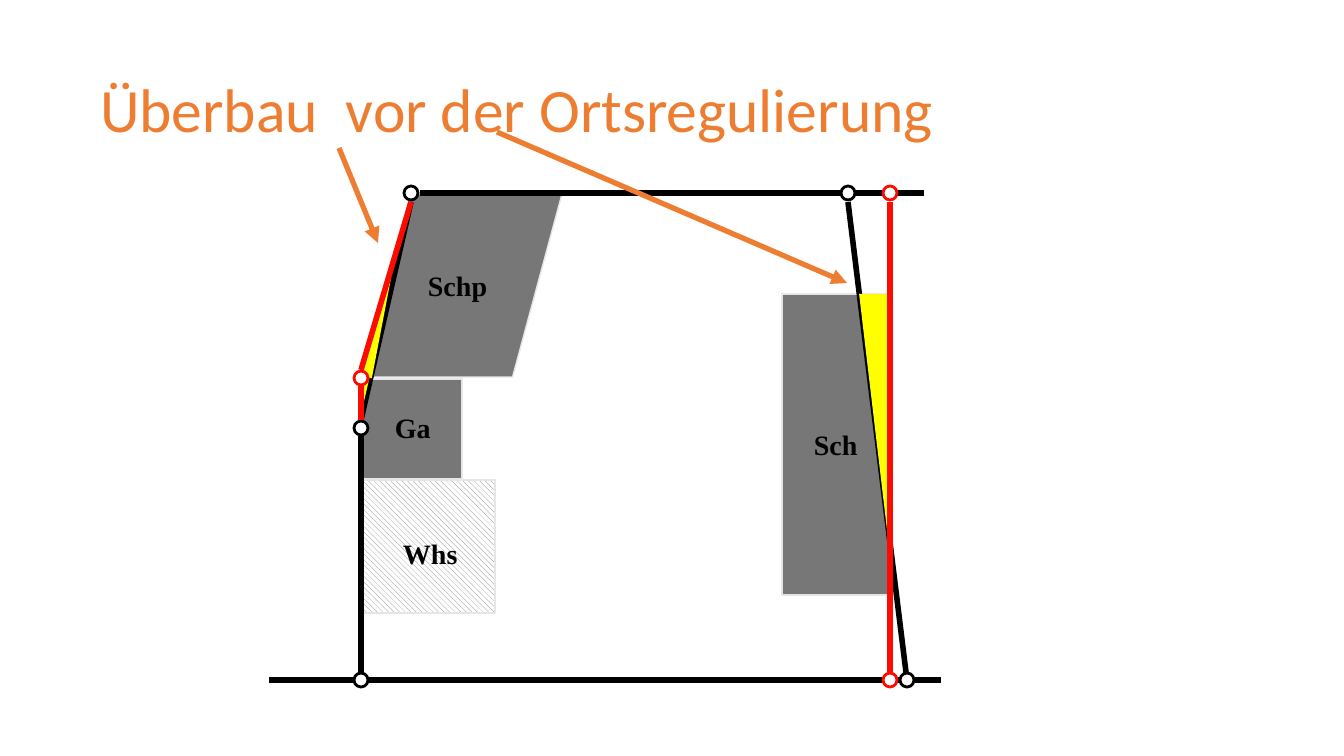
from lxml import etree
from pptx import Presentation
from pptx import util as u
from pptx.dml.color import RGBColor
from pptx.enum import dml, shapes, text
from pptx.oxml.ns import qn

ORANGE = RGBColor(0xED, 0x7D, 0x31)
BLACK = RGBColor(0x00, 0x00, 0x00)
RED = RGBColor(0xFC, 0x0C, 0x00)
YELLOW = RGBColor(0xFF, 0xFF, 0x00)
GREY = RGBColor(0x77, 0x77, 0x77)
PALE = RGBColor(0xE7, 0xE6, 0xE6)
WHITE = RGBColor(0xFF, 0xFF, 0xFF)

FORM = shapes.MSO_SHAPE
HATCH = dml.MSO_PATTERN
TITLE = "Überbau  vor der Ortsregulierung"
TITLE_BOX = (92, 40, 1159, 146)
POINT_SIZE = 14

BUILDINGS = [
    ("Schp", FORM.PARALLELOGRAM, HATCH.DARK_HORIZONTAL, (362, 194, 200, 183), (418, 264, 81, 44)),
    ("Ga", FORM.RECTANGLE, HATCH.DARK_HORIZONTAL, (362, 379, 100, 100), (385, 406, 56, 44)),
    ("Whs", FORM.RECTANGLE, HATCH.WIDE_DOWNWARD_DIAGONAL, (362, 480, 133, 133), (393, 532, 76, 44)),
    ("Sch", FORM.RECTANGLE, HATCH.DARK_HORIZONTAL, (782, 294, 108, 301), (804, 423, 65, 44)),
]
OVERBUILDS = [
    ((376, 277, 11, 102), 17),
    ((355, 376, 10, 41), 193),
    ((857, 294, 32, 235), 181),
]
OLD_BORDERS = [
    (420, 193, 924, 193),
    (361, 420, 411, 202),
    (361, 436, 361, 680),
    (269, 680, 941, 680),
    (907, 680, 848, 202),
]
OLD_POINTS = [(411, 193), (361, 428), (848, 193), (361, 680), (907, 680)]
NEW_BORDERS = [(361, 420, 361, 386), (361, 370, 411, 202), (890, 202, 890, 672)]
NEW_POINTS = [(361, 378), (890, 193), (890, 680)]
POINTERS = [(339, 148, 378, 243), (497, 132, 847, 283)]


def px(*lengths):
    return [u.Emu(round(length * 914400 / 100.8)) for length in lengths]


def write(frame, words, color, **font):
    frame.text = words
    run = frame.paragraphs[0].runs[0]
    for key, value in font.items():
        setattr(run.font, key, value)
    run.font.color.rgb = color


def add_form(slide, form, box):
    added = slide.shapes.add_shape(form, *px(*box))
    added.shadow.inherit = False
    return added


def add_building(slide, form, hatch, box):
    building = add_form(slide, form, box)
    if form == FORM.PARALLELOGRAM:
        building.adjustments[0] = 0.27
    building.fill.patterned()
    building.fill.pattern = hatch
    building.fill.fore_color.rgb = GREY
    building.fill.back_color.rgb = WHITE
    building.line.color.rgb = PALE
    building.line.width = u.Pt(1)


def add_label(slide, words, box):
    frame = slide.shapes.add_textbox(*px(*box)).text_frame
    frame.word_wrap = False
    frame.auto_size = text.MSO_AUTO_SIZE.SHAPE_TO_FIT_TEXT
    write(frame, words, BLACK, name="Times New Roman", size=u.Pt(20), bold=True)


def add_line(slide, ends, color, width, arrow=False):
    line = slide.shapes.add_connector(shapes.MSO_CONNECTOR.STRAIGHT, *px(*ends))
    line.line.color.rgb = color
    line.line.width = u.Pt(width)
    if arrow:
        etree.SubElement(line.line._get_or_add_ln(), qn("a:tailEnd"), type="triangle")
    etree.SubElement(line._element.spPr, qn("a:effectLst"))


def add_boundary(slide, borders, points, color):
    for ends in borders:
        add_line(slide, ends, color, 4)
    for x, y in points:
        corner = (x - POINT_SIZE / 2, y - POINT_SIZE / 2)
        point = add_form(slide, FORM.OVAL, (*corner, POINT_SIZE, POINT_SIZE))
        point.fill.solid()
        point.fill.fore_color.rgb = WHITE
        point.line.color.rgb = color
        point.line.width = u.Pt(2)


def add_overbuild(slide, box, angle):
    overbuild = add_form(slide, FORM.RIGHT_TRIANGLE, box)
    overbuild.rotation = angle
    overbuild.fill.solid()
    overbuild.fill.fore_color.rgb = YELLOW
    overbuild.line.fill.background()


def add_title(slide):
    title = slide.shapes.title
    title.left, title.top, title.width, title.height = px(*TITLE_BOX)
    frame = title.text_frame
    write(frame, TITLE, ORANGE, name="Calibri", size=u.Pt(44))
    left, top = px(8, 4)
    settings = {
        "word_wrap": True,
        "vertical_anchor": text.MSO_ANCHOR.MIDDLE,
        "margin_left": left,
        "margin_right": left,
        "margin_top": top,
        "margin_bottom": top,
    }
    for key, value in settings.items():
        setattr(frame, key, value)
    frame.paragraphs[0].alignment = text.PP_ALIGN.LEFT
    frame.paragraphs[0].line_spacing = 0.9


def main():
    deck = Presentation()
    deck.slide_width, deck.slide_height = px(1344, 756)
    slide = deck.slides.add_slide(deck.slide_layouts[5])
    add_title(slide)
    for _, form, hatch, box, _ in BUILDINGS:
        add_building(slide, form, hatch, box)
    add_boundary(slide, OLD_BORDERS, OLD_POINTS, BLACK)
    for box, angle in OVERBUILDS:
        add_overbuild(slide, box, angle)
    add_boundary(slide, NEW_BORDERS, NEW_POINTS, RED)
    for words, _, _, _, box in BUILDINGS:
        add_label(slide, words, box)
    for ends in POINTERS:
        add_line(slide, ends, ORANGE, 3.75, arrow=True)
    deck.save("out.pptx")


if __name__ == "__main__":
    main()
